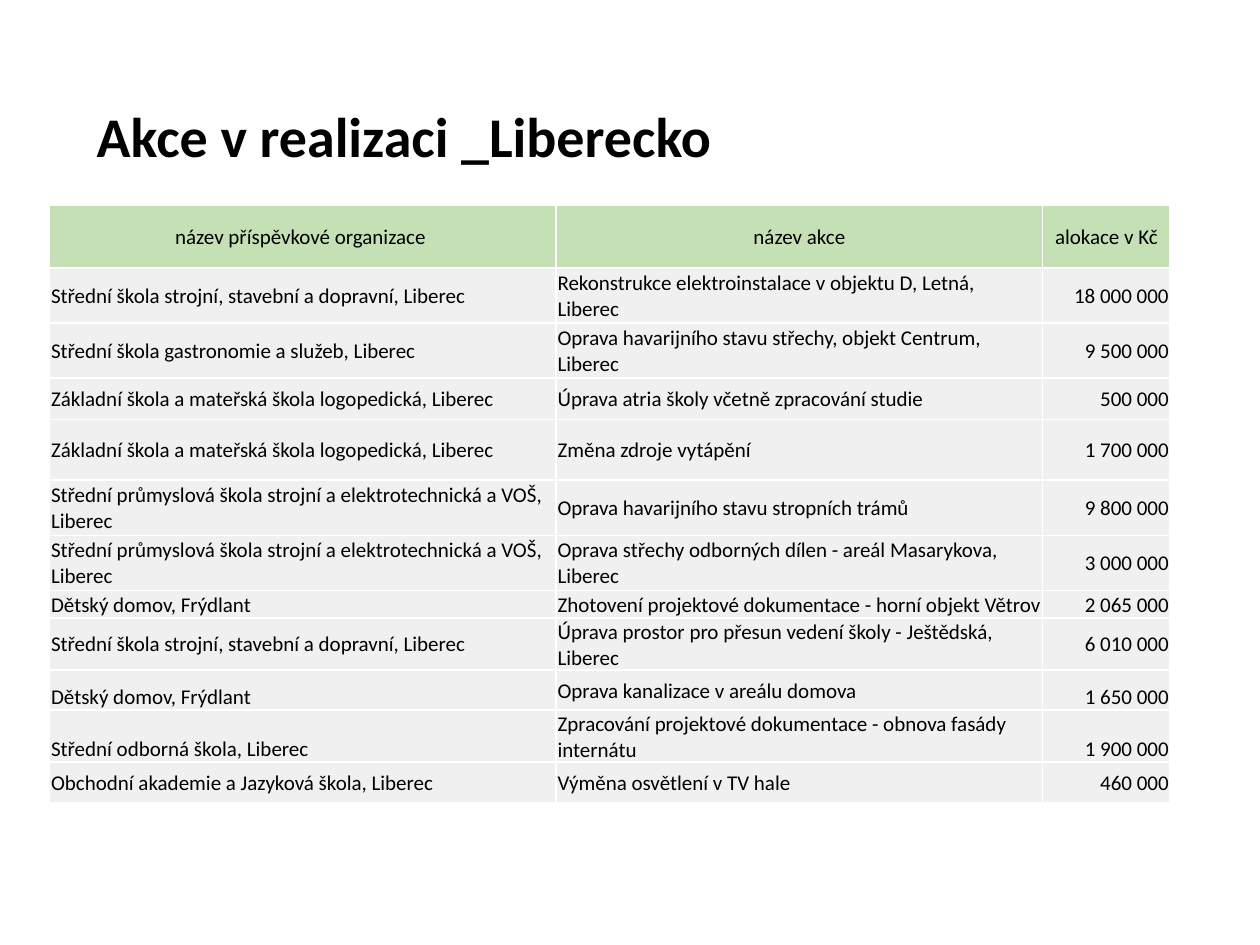
from dataclasses import dataclass

from lxml import etree
from pptx import Presentation
from pptx.dml.color import RGBColor
from pptx.enum.text import MSO_ANCHOR, MSO_AUTO_SIZE, PP_ALIGN
from pptx.oxml.ns import qn
from pptx.slide import Slide
from pptx.table import Table, _Cell
from pptx.util import Cm, Pt

MIDDLE, BOTTOM = MSO_ANCHOR.MIDDLE, MSO_ANCHOR.BOTTOM
LEFT, CENTER, RIGHT = PP_ALIGN.LEFT, PP_ALIGN.CENTER, PP_ALIGN.RIGHT

FONT = "Calibri"
COLORS = {"text": "000000", "header": "C5E0B4", "body": "F0F0F0", "border": "FFFFFF"}
COLUMN_WIDTHS = (10.21, 9.81, 2.57)
HEADER_HEIGHT = 1.27
HEADINGS = ("název příspěvkové organizace ", "název akce", "alokace v Kč")


@dataclass(frozen=True)
class Project:
    organization: str
    name: str
    allocation: str
    height: float
    outer_anchor: MSO_ANCHOR = MIDDLE  # first and last column


MECHANICAL = "Střední škola strojní, stavební a dopravní, Liberec"
SPEECH = "Základní škola a mateřská škola logopedická, Liberec"
INDUSTRIAL = "Střední průmyslová škola strojní a elektrotechnická a VOŠ, Liberec"
CHILDREN = "Dětský domov, Frýdlant"

PROJECTS = (
    Project(MECHANICAL, "Rekonstrukce elektroinstalace v objektu D, Letná, Liberec",
            "18 000 000", 1.11),
    Project("Střední škola gastronomie a služeb, Liberec",
            "Oprava havarijního stavu střechy, objekt Centrum, Liberec", "9 500 000", 1.11),
    Project(SPEECH, "Úprava atria školy včetně zpracování studie", "500 000", 0.84),
    Project(SPEECH, "Změna zdroje vytápění", "1 700 000", 1.22),
    Project(INDUSTRIAL, "Oprava havarijního stavu stropních trámů", "9 800 000", 1.11),
    Project(INDUSTRIAL, "Oprava střechy odborných dílen - areál Masarykova, Liberec",
            "3 000 000", 1.11),
    Project(CHILDREN, "Zhotovení projektové dokumentace - horní objekt Větrov",
            "2 065 000", 0.56, BOTTOM),
    Project(MECHANICAL, "Úprava prostor pro přesun vedení školy - Ještědská, Liberec",
            "6 010 000", 0.81),
    Project(CHILDREN, "Oprava kanalizace v areálu domova", "1 650 000", 0.81, BOTTOM),
    Project("Střední odborná škola, Liberec",
            "Zpracování projektové dokumentace - obnova fasády internátu",
            "1 900 000", 0.81, BOTTOM),
    Project("Obchodní akademie a Jazyková škola, Liberec", "Výměna osvětlení v TV hale",
            "460 000", 0.81),
)


def set_font(paragraph, size: int, bold: bool = False) -> None:
    font = paragraph.font
    font.name, font.size, font.bold = FONT, Pt(size), bold
    font.color.rgb = RGBColor.from_string(COLORS["text"])


def add_borders(cell: _Cell) -> None:
    properties = cell._tc.get_or_add_tcPr()
    for side in ("lnL", "lnR", "lnT", "lnB"):
        line = etree.SubElement(properties, qn(f"a:{side}"), w=str(Pt(1)))
        fill = etree.SubElement(line, qn("a:solidFill"))
        etree.SubElement(fill, qn("a:srgbClr"), val=COLORS["border"])


def fill_cell(cell: _Cell, text: str, color: str, alignment: PP_ALIGN,
              anchor: MSO_ANCHOR = MIDDLE) -> None:
    add_borders(cell)
    cell.fill.solid()
    cell.fill.fore_color.rgb = RGBColor.from_string(COLORS[color])
    cell.margin_left = cell.margin_right = cell.margin_top = Cm(0.03)
    cell.margin_bottom = 0
    cell.vertical_anchor = anchor
    cell.text = text
    paragraph = cell.text_frame.paragraphs[0]
    paragraph.alignment = alignment
    set_font(paragraph, 12)


def add_title(slide: Slide, text: str) -> None:
    title = slide.shapes.add_textbox(Cm(1.7), Cm(1.93), Cm(21.21), Cm(1.63))
    frame = title.text_frame
    frame.word_wrap = True
    frame.auto_size = MSO_AUTO_SIZE.SHAPE_TO_FIT_TEXT
    frame.text = text
    set_font(frame.paragraphs[0], 32, bold=True)


def add_project_table(slide: Slide) -> Table:
    heights = [HEADER_HEIGHT] + [project.height for project in PROJECTS]
    table = slide.shapes.add_table(
        len(heights), len(COLUMN_WIDTHS), Cm(1), Cm(4.13),
        Cm(sum(COLUMN_WIDTHS)), Cm(sum(heights))).table
    table.first_row = table.horz_banding = False
    for column, width in zip(table.columns, COLUMN_WIDTHS):
        column.width = Cm(width)
    for row, height in zip(table.rows, heights):
        row.height = Cm(height)

    # Header row
    for index, heading in enumerate(HEADINGS):
        fill_cell(table.cell(0, index), heading, "header", CENTER)

    # One row per project
    for index, project in enumerate(PROJECTS, start=1):
        anchor = project.outer_anchor
        fill_cell(table.cell(index, 0), project.organization, "body", LEFT, anchor)
        fill_cell(table.cell(index, 1), project.name, "body", LEFT)
        fill_cell(table.cell(index, 2), project.allocation, "body", RIGHT, anchor)
    return table


def main() -> None:
    presentation = Presentation()
    presentation.slide_width, presentation.slide_height = Cm(25.4), Cm(19.05)
    slide = presentation.slides.add_slide(presentation.slide_layouts[6])
    add_title(slide, "Akce v realizaci _Liberecko")
    add_project_table(slide)
    presentation.save("out.pptx")


if __name__ == "__main__":
    main()
